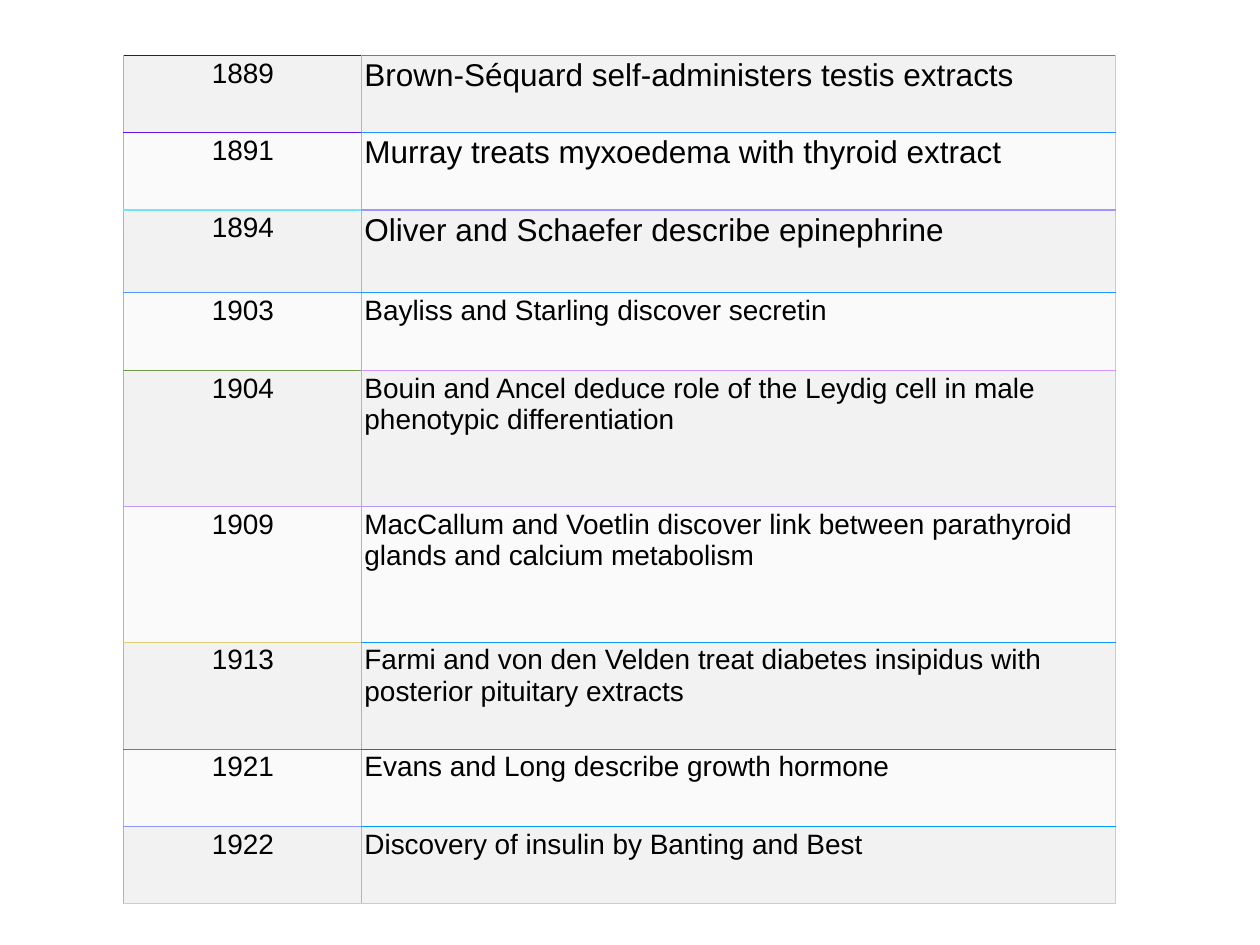
from lxml import etree
from pptx import Presentation
from pptx.dml.color import RGBColor
from pptx.enum import text as tx
from pptx.oxml import ns
from pptx.util import Pt


def write(cell, words, size=16, align=tx.PP_ALIGN.LEFT, color="000000"):
    para = cell.text_frame.paragraphs[0]
    para.alignment = align
    run = para.add_run()
    run.text = words
    run.font.name = "Arial"
    run.font.size = Pt(size)
    run.font.bold = False
    run.font.color.rgb = RGBColor.from_string(color)


def edge(cell, sides):
    props = cell._tc.get_or_add_tcPr()
    for i, (side, color) in enumerate(zip("LRTB", sides)):
        line = etree.Element(ns.qn("a:ln" + side), w=str(Pt(0.75)))
        fill = etree.SubElement(line, ns.qn("a:solidFill"))
        etree.SubElement(fill, ns.qn("a:srgbClr"), val=color)
        props.insert(i, line)


events = [
    ("1889", "Brown-Séquard self-administers testis extracts", 18, 44.2),
    ("1891", "Murray treats myxoedema with thyroid extract", 18, 44.2),
    ("1894", "Oliver and Schaefer describe epinephrine", 18, 47.4),
    ("1903", "Bayliss and Starling discover secretin", 16, 44.2),
    ("1904", "Bouin and Ancel deduce role of the Leydig cell in male "
     "phenotypic differentiation", 16, 77.7),
    ("1909", "MacCallum and Voetlin discover link between parathyroid "
     "glands and calcium metabolism", 16, 77.7),
    ("1913", "Farmi and von den Velden treat diabetes insipidus with "
     "posterior pituitary extracts", 16, 61.1),
    ("1921", "Evans and Long describe growth hormone", 16, 44.2),
    ("1922", "Discovery of insulin by Banting and Best", 16, 44.2),
]
rules = [
    ["0013E6", "6013E6", "70E6F9", "5098FC", "709B4A",
     "C098FC", "E0CC77", "1094FC", "9096FC", "CCCCCC"],
    ["1098FC", "2093FC", "A095FC", "2099FC", "D095FC",
     "B098FC", "1097FC", "C014E6", "0099FC", "CCCCCC"],
]
ends = ["D098FC", "D098FC", "CCCCCC"]
bands = ["F2F2F2", "FAFAFA"]
widths = [136, 430.6]

deck = Presentation()
deck.slide_width, deck.slide_height = Pt(720), Pt(540)
slide = deck.slides.add_slide(deck.slide_layouts[6])

high = sum(event[3] for event in events)
frame = slide.shapes.add_table(len(events), 2, Pt(70.8), Pt(31.6),
                               Pt(sum(widths)), Pt(high))
table = frame.table
table.first_row = table.horz_banding = False
for col, width in zip(table.columns, widths):
    col.width = Pt(width)

for r, (year, event, size, height) in enumerate(events):
    table.rows[r].height = Pt(height)
    write(table.cell(r, 0), year, align=tx.PP_ALIGN.CENTER)
    write(table.cell(r, 1), event, size=size)
    for c in range(2):
        cell = table.cell(r, c)
        cell.margin_left = cell.margin_right = cell.margin_top = Pt(1.5)
        cell.margin_bottom = Pt(6)
        cell.vertical_anchor = tx.MSO_ANCHOR.TOP
        cell.fill.solid()
        cell.fill.fore_color.rgb = RGBColor.from_string(bands[r % 2])
        edge(cell, ends[c:c + 2] + rules[c][r:r + 2])

deck.save("out.pptx")
